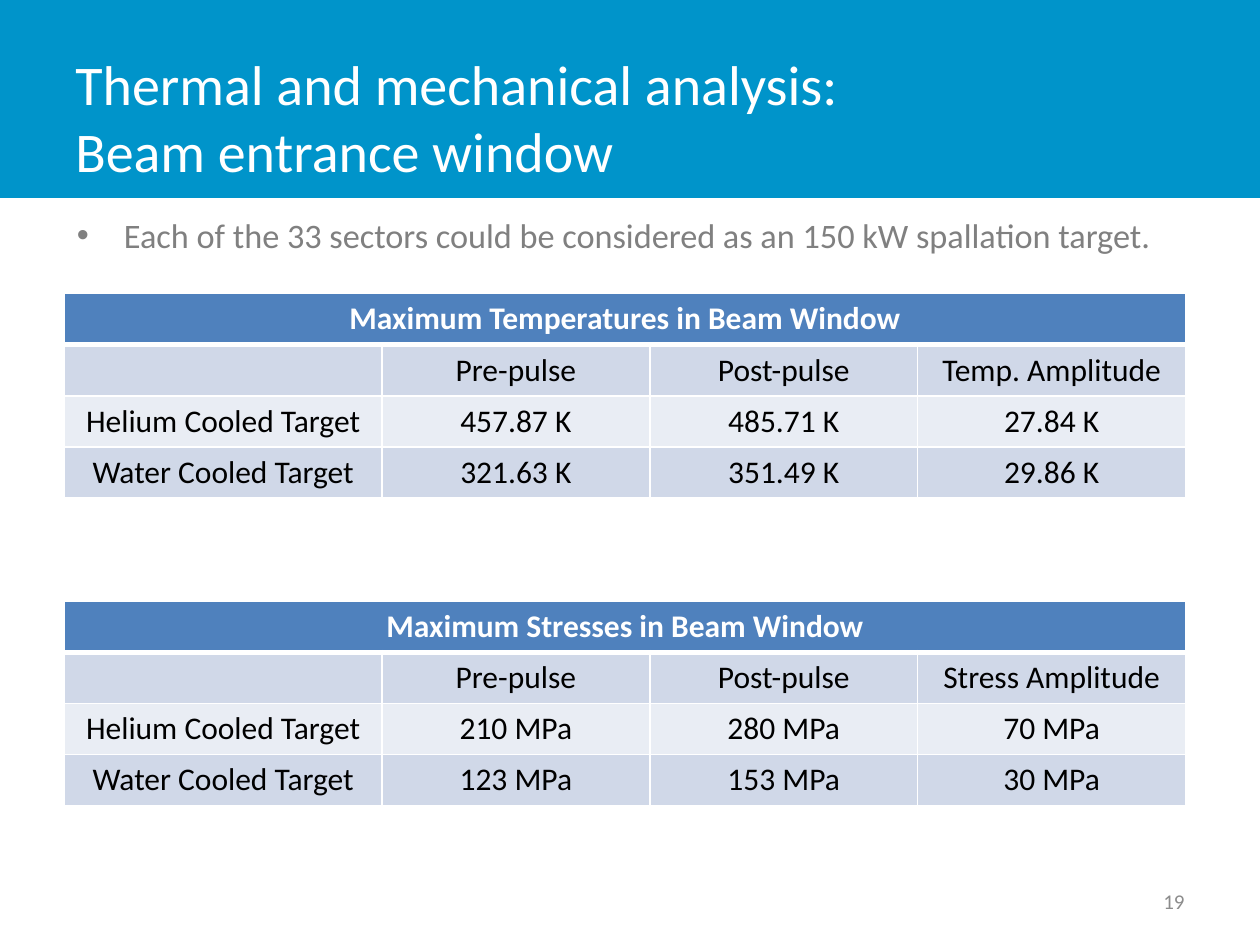
from pptx import Presentation
from pptx.dml.color import RGBColor
from pptx.enum.shapes import MSO_SHAPE
from pptx.enum.text import MSO_ANCHOR, PP_ALIGN
from pptx.oxml import parse_xml
from pptx.oxml.ns import nsdecls
from pptx.util import Cm, Pt


def rgb(color):
    return RGBColor.from_string(color)


def write(tf, text, size=18, color="000000", bold=False,
          align=PP_ALIGN.LEFT, anchor=MSO_ANCHOR.TOP):
    tf.word_wrap = True
    tf.vertical_anchor = anchor
    p = tf.paragraphs[0]
    p.text = text
    p.alignment = align
    for r in p.runs:
        r.font.name = "Calibri"
        r.font.size = Pt(size)
        r.font.bold = bold
        r.font.color.rgb = rgb(color)
    return p


prs = Presentation()
prs.slide_width, prs.slide_height = Cm(25.4), Cm(19.05)
s = prs.slides.add_slide(prs.slide_layouts[6])

# Title band
sp = s.shapes.add_shape(MSO_SHAPE.RECTANGLE, 0, 0, prs.slide_width, Cm(3.99))
sp.shadow.inherit = False
sp.fill.solid()
sp.fill.fore_color.rgb = rgb("0094CA")
sp.line.fill.background()

# Title
sp = s.shapes.add_textbox(Cm(1.27), Cm(0.76), Cm(19.84), Cm(3.18))
write(sp.text_frame, "Thermal and mechanical analysis:\vBeam entrance window",
      size=32, color="FFFFFF", anchor=MSO_ANCHOR.MIDDLE)

# Bullet
sp = s.shapes.add_textbox(Cm(1.3), Cm(4.19), Cm(22.86), Cm(1.6))
p = write(sp.text_frame,
          "Each of the 33 sectors could be considered as an 150 kW spallation target.",
          size=19.6, color="808080")
pPr = p._p.get_or_add_pPr()
pPr.set("marL", str(Cm(0.95)))
pPr.set("indent", str(Cm(-0.95)))
pPr.append(parse_xml(f'<a:buFont {nsdecls("a")} typeface="Arial"/>'))
pPr.append(parse_xml(f'<a:buChar {nsdecls("a")} char="•"/>'))

# Tables: top, heading, rows
tables = [
    (5.92, "Maximum Temperatures in Beam Window", [
        ["", "Pre-pulse", "Post-pulse", "Temp. Amplitude"],
        ["Helium Cooled Target", "457.87 K", "485.71 K", "27.84 K"],
        ["Water Cooled Target", "321.63 K", "351.49 K", "29.86 K"]]),
    (12.12, "Maximum Stresses in Beam Window", [
        ["", "Pre-pulse", "Post-pulse", "Stress Amplitude"],
        ["Helium Cooled Target", "210 MPa", "280 MPa", "70 MPa"],
        ["Water Cooled Target", "123 MPa", "153 MPa", "30 MPa"]]),
]
widths = [6.4, 5.4, 5.4, 5.4]
fills = ["4F81BD", "D0D8E8", "E9EDF4", "D0D8E8"]

for top, heading, body in tables:
    rows = [[heading, "", "", ""]] + body
    table = s.shapes.add_table(len(rows), len(widths), Cm(1.3), Cm(top),
                               Cm(sum(widths)), Cm(1.03 * len(rows))).table
    for column, width in zip(table.columns, widths):
        column.width = Cm(width)
    table.cell(0, 0).merge(table.cell(0, 3))
    for i, row in enumerate(rows):
        for j, text in enumerate(row):
            cell = table.cell(i, j)
            # White borders, thick between heading and body
            tcPr = cell._tc.get_or_add_tcPr()
            for side in "LRTB":
                thick = (i, side) in [(0, "B"), (1, "T")]
                tcPr.append(parse_xml(
                    f'<a:ln{side} {nsdecls("a")} w="{Pt(3 if thick else 1)}">'
                    '<a:solidFill><a:srgbClr val="FFFFFF"/></a:solidFill>'
                    f'</a:ln{side}>'))
            cell.fill.solid()
            cell.fill.fore_color.rgb = rgb(fills[i])
            if text:
                write(cell.text_frame, text, bold=i == 0, align=PP_ALIGN.CENTER,
                      color="FFFFFF" if i == 0 else "000000")

# Slide number
sp = s.shapes.add_textbox(Cm(18.2), Cm(17.66), Cm(5.93), Cm(1.01))
write(sp.text_frame, "19", size=12, color="8C8C8C",
      align=PP_ALIGN.RIGHT, anchor=MSO_ANCHOR.MIDDLE)

prs.save("out.pptx")
